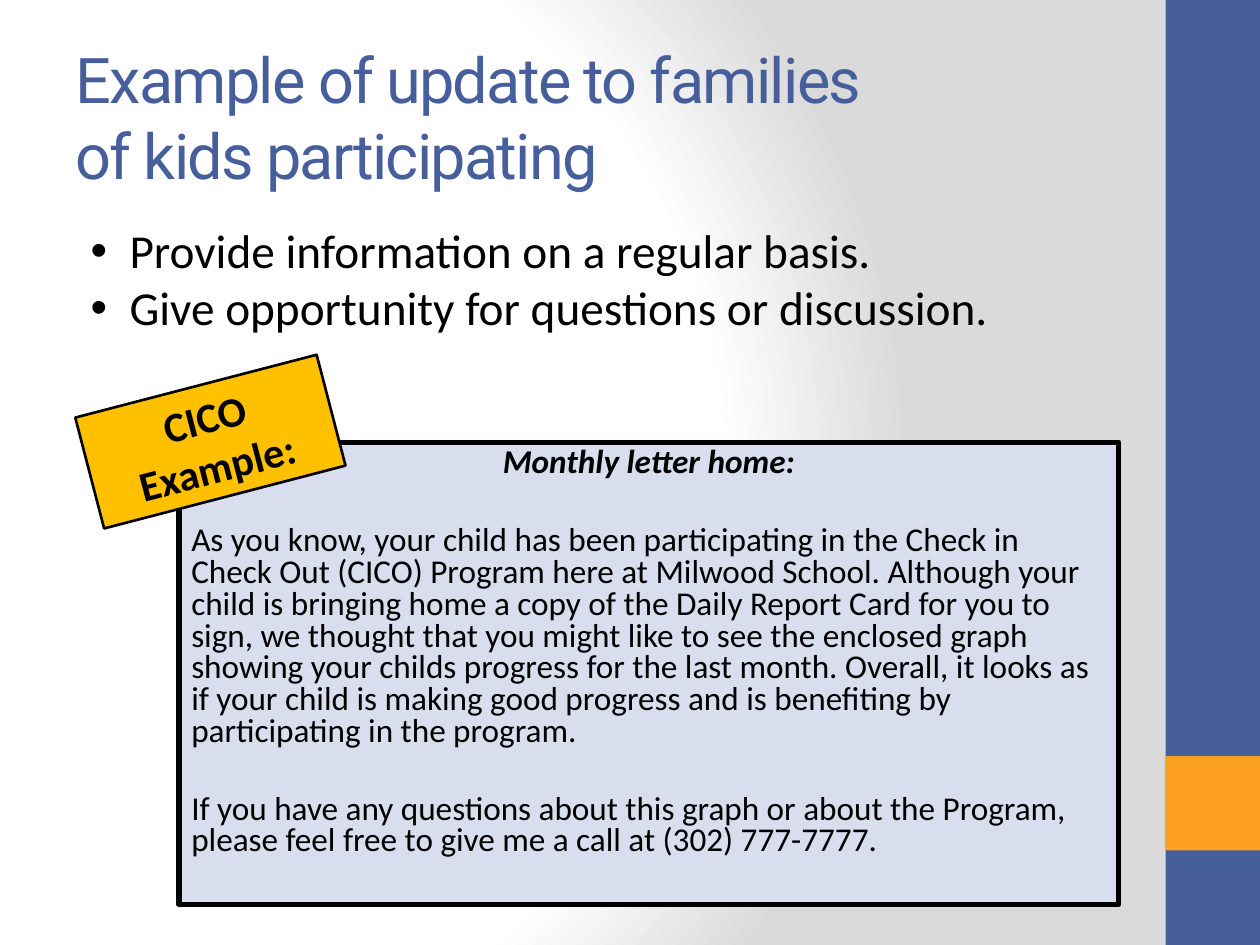
from pptx import Presentation
from pptx.dml.color import RGBColor
from pptx.enum.shapes import MSO_SHAPE
from pptx.enum.text import MSO_ANCHOR, PP_ALIGN
from pptx.oxml import parse_xml
from pptx.oxml.ns import nsdecls, qn
from pptx.util import Inches, Pt

BLUE, ORANGE, GOLD, PALE, BLACK = "465E9C", "FDA023", "FFC000", "D8DEED", "000000"
POINTS = ["Provide information on a regular basis.", "Give opportunity for questions or discussion."]
LETTER = [
    "As you know, your child has been participating in the Check in Check Out (CICO) Program here at "
    "Milwood School. Although your child is bringing home a copy of the Daily Report Card for you to sign, "
    "we thought that you might like to see the enclosed graph showing your childs progress for the last "
    "month. Overall, it looks as if your child is making good progress and is benefiting by participating "
    "in the program.",
    "If you have any questions about this graph or about the Program, please feel free to give me a call "
    "at (302) 777-7777.",
]


def color(value):
    return RGBColor.from_string(value)


class SlideBuilder:
    """Holds the text style and the current page, and adds each kind of element."""

    font = "Calibri"
    title_font = "Roboto"

    def __init__(self, page):
        self.page = page

    def background(self):
        self.page.background.fill.gradient()
        old = self.page.element.find(".//" + qn("a:gradFill"))
        stops = "".join(
            f'<a:gs pos="{position * 1000}"><a:srgbClr val="{value}"/></a:gs>'
            for position, value in [(0, "FFFFFF"), (75, "FFFFFF"), (100, "DADADA")]
        )
        new = parse_xml(
            f'<a:gradFill {nsdecls("a")} rotWithShape="1"><a:gsLst>{stops}</a:gsLst><a:path path="circle">'
            '<a:fillToRect l="20000" t="50000" r="100000" b="50000"/></a:path></a:gradFill>'
        )
        old.getparent().replace(old, new)

    def place(self, shape, area):
        shape.left, shape.top, shape.width, shape.height = map(Inches, area)

    def span(self, para, text, size, value=BLACK, font=None, bold=False, italic=False):
        span = para.add_run()
        span.text = text
        span.font.name = font or self.font
        span.font.size = Pt(size)
        span.font.color.rgb = color(value)
        span.font.bold, span.font.italic = bold, italic
        return span

    def title(self, lines, area):
        title = self.page.shapes.title
        self.place(title, area)
        title.text_frame.word_wrap = True
        title.text_frame.vertical_anchor = MSO_ANCHOR.MIDDLE
        para = title.text_frame.paragraphs[0]
        para.alignment = PP_ALIGN.LEFT
        for index, line in enumerate(lines):
            if index:
                para.add_line_break()
            span = self.span(para, line, 36, BLUE, self.title_font)
            span.font._element.set("spc", "-100")

    def box(self, area, fill, line_width=0, rotation=0, anchor=MSO_ANCHOR.MIDDLE):
        box = self.page.shapes.add_shape(MSO_SHAPE.RECTANGLE, *map(Inches, area))
        box.shadow.inherit = False
        box.rotation = rotation
        box.fill.solid()
        box.fill.fore_color.rgb = color(fill)
        if line_width:
            box.line.color.rgb = color(BLACK)
            box.line.width = Pt(line_width)
        else:
            box.line.fill.background()
        box.text_frame.word_wrap = True
        box.text_frame.vertical_anchor = anchor
        return box

    def bullets(self, items, area):
        frame = self.page.shapes.add_textbox(*map(Inches, area)).text_frame
        frame.word_wrap = True
        for index, item in enumerate(items):
            para = frame.add_paragraph() if index else frame.paragraphs[0]
            self.span(para, item, 27)
            properties = para._p.get_or_add_pPr()
            properties.set("marL", str(Inches(0.31)))
            properties.set("indent", str(-Inches(0.31)))
            properties.append(parse_xml(f'<a:buFont {nsdecls("a")} typeface="Arial"/>'))
            properties.append(parse_xml(f'<a:buChar {nsdecls("a")} char="•"/>'))

    def letter(self, heading, paragraphs, area):
        frame = self.box(area, PALE, 3, anchor=MSO_ANCHOR.TOP).text_frame
        para = frame.paragraphs[0]
        para.alignment = PP_ALIGN.CENTER
        para.line_spacing = 0.8
        self.span(para, heading, 19, bold=True, italic=True)
        for text in paragraphs:
            para = frame.add_paragraph()
            para.alignment = PP_ALIGN.LEFT
            para.line_spacing = 0.8
            para.space_before = Pt(26)
            self.span(para, text, 19)

    def label(self, text, area, rotation):
        para = self.box(area, GOLD, 1.5, rotation).text_frame.paragraphs[0]
        para.alignment = PP_ALIGN.CENTER
        self.span(para, text, 24, bold=True)


def main():
    deck = Presentation()
    deck.slide_width, deck.slide_height = Inches(10), Inches(7.5)
    builder = SlideBuilder(deck.slides.add_slide(deck.slide_layouts[5]))
    builder.background()
    builder.box((9.25, 0, 0.75, 7.5), BLUE)
    builder.box((9.25, 6, 0.75, 0.75), ORANGE)
    builder.title(["Example of update to families ", "of kids participating"], (0.5, 0.3, 8.33, 1.25))
    builder.letter("Monthly letter home:", LETTER, (1.42, 3.51, 7.46, 3.67))
    builder.bullets(POINTS, (0.62, 1.71, 8.72, 1.01))
    builder.label("CICO Example:", (0.68, 3.05, 1.98, 0.91), 345.4)
    deck.save("out.pptx")


if __name__ == "__main__":
    main()
